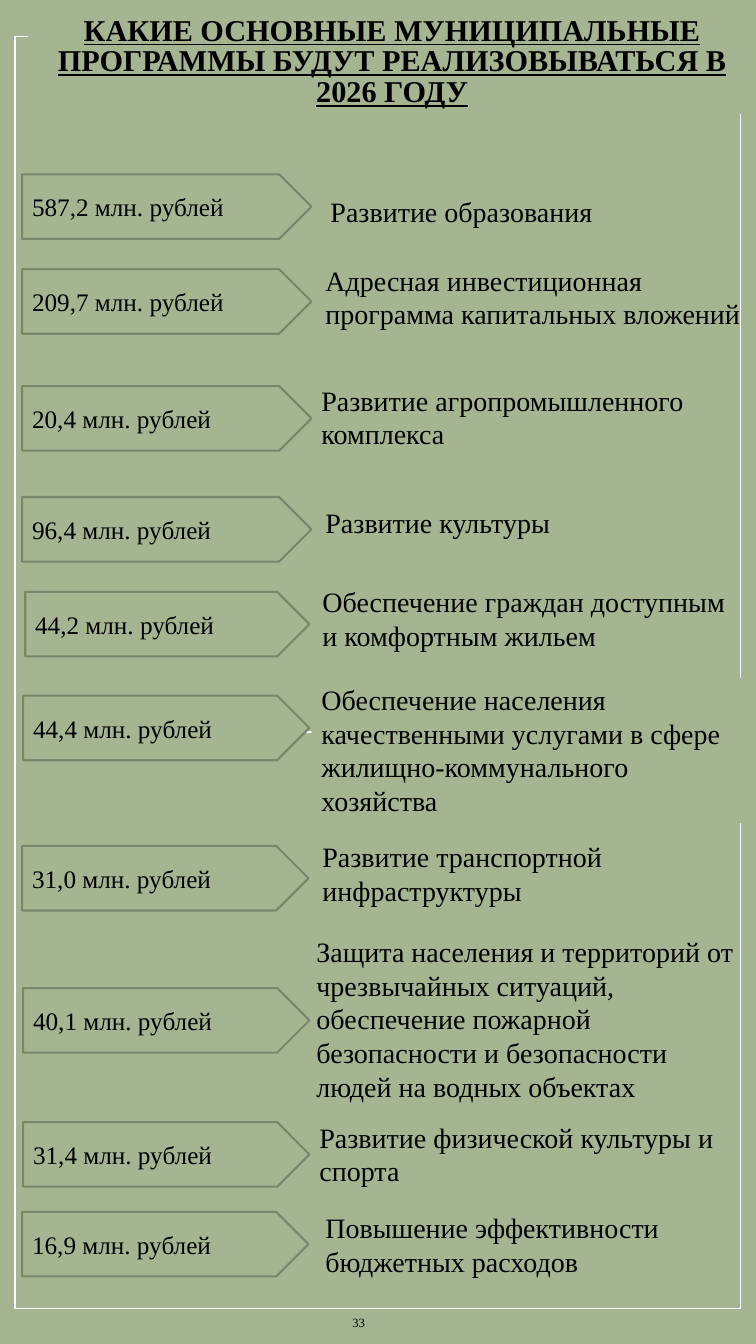
from dataclasses import dataclass

from lxml import etree
from pptx import Presentation
from pptx.dml.color import RGBColor
from pptx.enum import shapes, text
from pptx.oxml import ns
from pptx.util import Inches, Pt


@dataclass(frozen=True)
class Theme:
    font: str = "Times New Roman"
    sage: RGBColor = RGBColor(0xA5, 0xB5, 0x92)
    outline: RGBColor = RGBColor(0x7A, 0x86, 0x6C)
    white: RGBColor = RGBColor(0xFF, 0xFF, 0xFF)
    black: RGBColor = RGBColor(0, 0, 0)
    title_size: float = 21.6
    program_size: float = 20
    amount_size: float = 18
    number_size: float = 9


@dataclass(frozen=True)
class Program:
    amount: str
    name: str
    arrow: tuple
    label: tuple
    lines: int
    filled: bool = False


THEME = Theme()
WIDTH = Inches(7.5)
HEIGHT = Inches(13.33)
COLUMN = WIDTH / 75
ROW = HEIGHT / 133.3
ARROW_ROWS = 6.4
LINE_ROWS = 3.36

PROGRAMS = [
    Program("587,2", "Развитие образования", (2.2, 17.3, 28.7), (31.8, 18.8, 42.2), 1),
    Program("209,7", "Адресная инвестиционная программа капитальных вложений",
            (2.2, 26.7, 28.7), (31.3, 25.6, 46.3), 2),
    Program("20,4", "Развитие агропромышленного комплекса",
            (2.2, 38.3, 28.7), (30.9, 37.5, 42.2), 2),
    Program("96,4", "Развитие культуры", (2.2, 49.3, 28.7), (31.3, 49.6, 42.9), 1),
    Program("44,2", "Обеспечение граждан доступным и комфортным жильем",
            (2.5, 58.7, 28.2), (31, 57.5, 42.5), 2),
    Program("44,4", "Обеспечение населения качественными услугами в сфере "
            "жилищно-коммунального хозяйства",
            (2.3, 69, 28.4), (30.9, 67.2, 42.9), 4, True),
    Program("31,0", "Развитие транспортной инфраструктуры",
            (2.2, 83.9, 28.4), (31, 82.8, 43.8), 2),
    Program("40,1", "Защита населения и территорий от чрезвычайных ситуаций, "
            "обеспечение пожарной безопасности и безопасности людей на водных объектах",
            (2.3, 98, 28.4), (30.4, 92.2, 43.5), 5),
    Program("31,4", "Развитие физической культуры и спорта",
            (2.3, 111.3, 28.4), (30.7, 110.6, 42.9), 2),
    Program("16,9", "Повышение эффективности бюджетных расходов",
            (2.2, 120.2, 28.4), (31.3, 119.6, 44), 2),
]


def place(column, row, columns, rows):
    return [round(length) for length in
            (column * COLUMN, row * ROW, columns * COLUMN, rows * ROW)]


def paint(shape):
    shape.fill.solid()
    shape.fill.fore_color.rgb = THEME.sage


def write(shape, content, size, anchor=text.MSO_ANCHOR.TOP, align=text.PP_ALIGN.LEFT):
    frame = shape.text_frame
    frame.word_wrap = True
    frame.vertical_anchor = anchor
    paragraph = frame.paragraphs[0]
    paragraph.text = content
    paragraph.alignment = align
    paragraph.font.name = THEME.font
    paragraph.font.size = Pt(size)
    paragraph.font.color.rgb = THEME.black
    return paragraph


def add_outlined(slide, kind, area, color, weight):
    shape = slide.shapes.add_shape(kind, *place(*area))
    shape.shadow.inherit = False
    paint(shape)
    shape.line.color.rgb = color
    shape.line.width = Pt(weight)
    return shape


def add_rule(slide, start, end, row):
    left, top, length, _ = place(start, row, end - start, 0)
    rule = slide.shapes.add_connector(
        shapes.MSO_CONNECTOR.STRAIGHT, left, top, left + length, top)
    rule.line.color.rgb = THEME.white
    rule.line.width = Pt(0.79)
    etree.SubElement(rule._element.spPr, ns.qn("a:effectLst"))


def add_title(slide, content):
    title = slide.shapes.add_textbox(*place(2.8, 1, 72.2, 10.3))
    paint(title)
    paragraph = write(title, content, THEME.title_size,
                      text.MSO_ANCHOR.BOTTOM, text.PP_ALIGN.CENTER)
    paragraph.line_spacing = 0.85
    paragraph.font.bold = True
    paragraph.font.underline = True


def add_page_number(slide, number):
    box = slide.shapes.add_textbox(*place(32.8, 129.5, 4.4, 3.4))
    write(box, number, THEME.number_size, text.MSO_ANCHOR.MIDDLE, text.PP_ALIGN.RIGHT)


def add_program(slide, program):
    arrow = add_outlined(slide, shapes.MSO_SHAPE.PENTAGON,
                         (*program.arrow, ARROW_ROWS), THEME.outline, 1.5)
    write(arrow, f"{program.amount} млн. рублей", THEME.amount_size,
          text.MSO_ANCHOR.MIDDLE)
    label = slide.shapes.add_textbox(
        *place(*program.label, 1 + LINE_ROWS * program.lines))
    if program.filled:
        paint(label)
    write(label, program.name, THEME.program_size)


def main():
    presentation = Presentation()
    presentation.slide_width = WIDTH
    presentation.slide_height = HEIGHT
    slide = presentation.slides.add_slide(presentation.slide_layouts[6])
    paint(slide.background)
    add_outlined(slide, shapes.MSO_SHAPE.RECTANGLE,
                 (1.5, 3.6, 72, 126.2), THEME.white, 1)
    add_rule(slide, 12.2, 62.8, 72.6)
    add_title(slide, "КАКИЕ ОСНОВНЫЕ МУНИЦИПАЛЬНЫЕ ПРОГРАММЫ "
                     "БУДУТ РЕАЛИЗОВЫВАТЬСЯ В 2026 ГОДУ")
    add_page_number(slide, "33")
    for program in PROGRAMS:
        add_program(slide, program)
    presentation.save("out.pptx")


if __name__ == "__main__":
    main()
